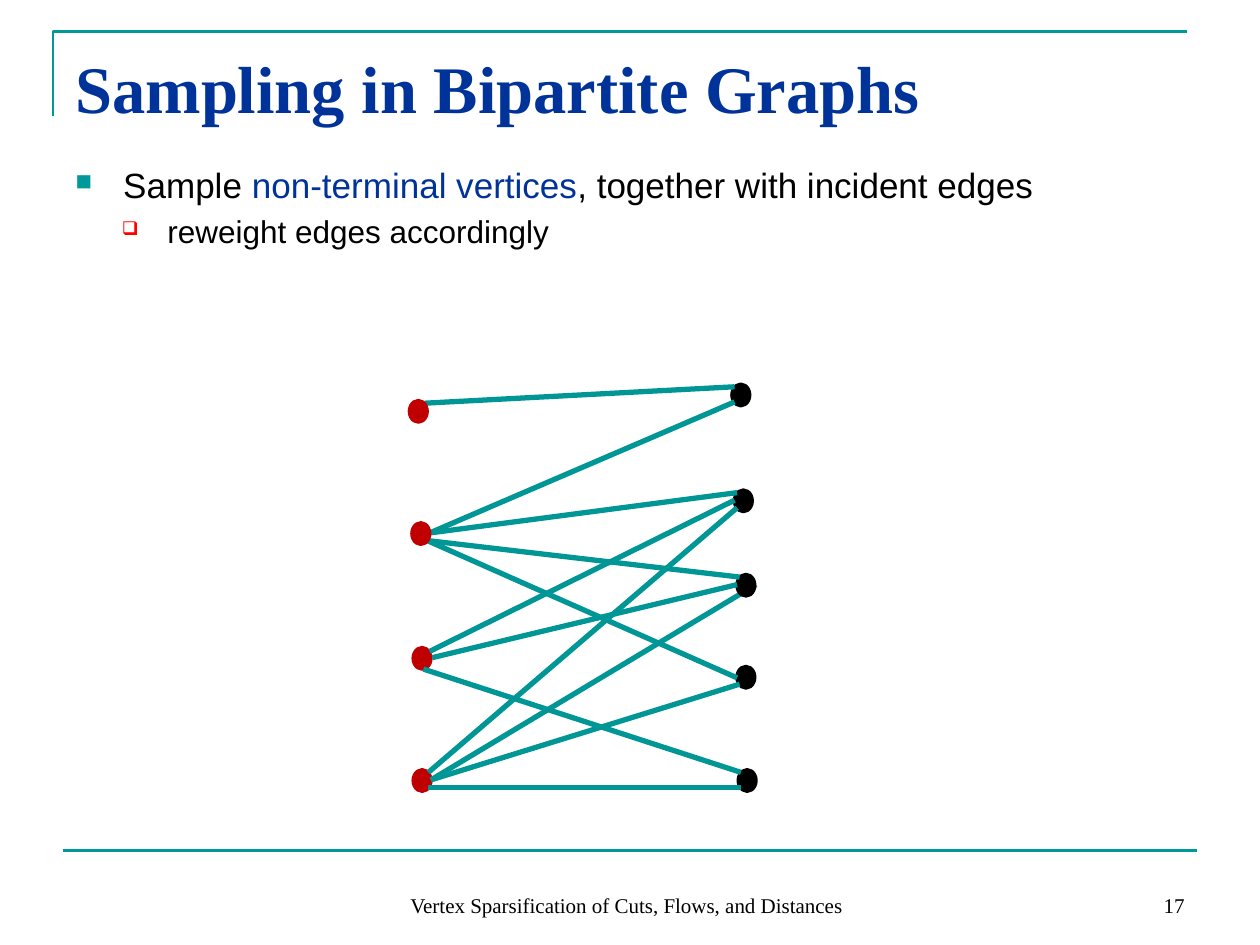
from lxml import etree
from pptx import Presentation
from pptx.dml.color import RGBColor
from pptx.enum.shapes import MSO_CONNECTOR, MSO_SHAPE
from pptx.enum.text import MSO_ANCHOR, PP_ALIGN
from pptx.oxml.ns import qn
from pptx.util import Inches, Pt

OVAL = MSO_SHAPE.OVAL
STRAIGHT = MSO_CONNECTOR.STRAIGHT
TOP, MIDDLE, BOTTOM = MSO_ANCHOR.TOP, MSO_ANCHOR.MIDDLE, MSO_ANCHOR.BOTTOM
LEFT, CENTER, RIGHT = PP_ALIGN.LEFT, PP_ALIGN.CENTER, PP_ALIGN.RIGHT
SERIF, SANS = "Times New Roman", "Arial"
RULE, EDGE, BLUE = "009999", "009696", "003399"
TERMINAL, BLACK = "C00000", "000000"

presentation = Presentation()
presentation.slide_width = Inches(10)
presentation.slide_height = Inches(7.5)
slide = presentation.slides.add_slide(presentation.slide_layouts[6])
shapes = slide.shapes
color = RGBColor.from_string


def add_line(start, end, line_color, width):
    connector = shapes.add_connector(STRAIGHT, *[Inches(value) for value in start + end])
    connector.line.color.rgb = color(line_color)
    connector.line.width = Pt(width)
    etree.SubElement(connector._element.spPr, qn("a:effectLst"))


def format_run(run, font_name, size, font_color, bold=False):
    run.font.name = font_name
    run.font.size = Pt(size)
    run.font.color.rgb = color(font_color)
    run.font.bold = bold


builder = shapes.build_freeform(Inches(0.42), Inches(0.92), scale=1.0)
builder.add_line_segments(
    [(Inches(0.42), Inches(0.25)), (Inches(9.42), Inches(0.25))], close=False
)
corner = builder.convert_to_shape()
corner.shadow.inherit = False
corner.fill.background()
corner.line.color.rgb = color(RULE)
corner.line.width = Pt(1.5)
add_line((0.5, 6.75), (9.5, 6.75), RULE, 1.5)

labels = [
    ("Sampling in Bipartite Graphs", (0.5, 0.3, 9, 0.78), MIDDLE, LEFT, 38, BLUE, True),
    ("Vertex Sparsification of Cuts, Flows, and Distances",
     (2.61, 6.83, 4.73, 0.5), BOTTOM, CENTER, 12, BLACK, False),
    ("17", (7.17, 6.83, 2.33, 0.5), BOTTOM, RIGHT, 12, BLACK, False),
]
for text, box, anchor, alignment, size, font_color, bold in labels:
    text_frame = shapes.add_textbox(*[Inches(value) for value in box]).text_frame
    text_frame.word_wrap = True
    text_frame.vertical_anchor = anchor
    text_frame.text = text
    paragraph = text_frame.paragraphs[0]
    paragraph.alignment = alignment
    format_run(paragraph.runs[0], SERIF, size, font_color, bold)

body = shapes.add_textbox(Inches(0.5), Inches(1.25), Inches(9), Inches(5.45)).text_frame
body.word_wrap = True
body.vertical_anchor = TOP
bullets = [
    ([("Sample ", BLACK), ("non-terminal vertices", BLUE),
      (", together with incident edges", BLACK)], 20, 0.38, 0.38, "■", RULE, 65),
    ([("reweight edges accordingly", BLACK)], 18, 0.73, 0.36, "❑", "FF0000", 60),
]
for level, (parts, size, margin, hanging, mark, mark_color, percent) in enumerate(bullets):
    paragraph = body.add_paragraph() if level else body.paragraphs[0]
    paragraph.level = level
    paragraph.space_before = Pt(size * 0.2)
    for text, font_color in parts:
        run = paragraph.add_run()
        run.text = text
        format_run(run, SANS, size, font_color)
    properties = paragraph._p.get_or_add_pPr()
    properties.set("marL", str(Inches(margin)))
    properties.set("indent", str(-Inches(hanging)))
    bullet_color = etree.SubElement(properties, qn("a:buClr"))
    etree.SubElement(bullet_color, qn("a:srgbClr"), val=mark_color)
    etree.SubElement(properties, qn("a:buSzPct"), val=str(percent * 1000))
    etree.SubElement(properties, qn("a:buChar"), char=mark)

layers = [
    ([(3.28, 5.14, TERMINAL), (3.28, 6.11, TERMINAL), (5.85, 5.29, BLACK)],
     [((3.39, 4.29), (5.85, 5.38)), ((3.42, 6.19), (6, 4.64)),
      ((5.87, 5.43), (3.42, 6.19))]),
    ([(5.83, 3.89, BLACK), (5.81, 3.05, BLACK), (5.85, 4.56, BLACK), (5.86, 6.11, BLACK)],
     [((3.43, 5.22), (5.85, 4.64)), ((3.41, 5.17), (5.83, 3.97)),
      ((5.85, 4.03), (3.4, 6.13)), ((3.41, 4.23), (5.83, 3.19)),
      ((5.85, 3.91), (3.41, 4.23)), ((3.36, 5.31), (5.88, 6.13)),
      ((3.37, 3.2), (5.83, 3.07)), ((5.88, 6.25), (3.4, 6.25)),
      ((5.87, 4.58), (3.39, 4.29))]),
    ([(3.25, 3.18, TERMINAL), (3.27, 4.15, TERMINAL)], []),
]
for vertices, edges in layers:
    for left, top, vertex_color in vertices:
        vertex = shapes.add_shape(OVAL, Inches(left), Inches(top), Inches(0.14), Inches(0.17))
        vertex.shadow.inherit = False
        vertex.fill.solid()
        vertex.fill.fore_color.rgb = color(vertex_color)
        vertex.line.color.rgb = color(vertex_color)
        vertex.line.width = Pt(2)
    for start, end in edges:
        add_line(start, end, EDGE, 3)

presentation.save("out.pptx")
